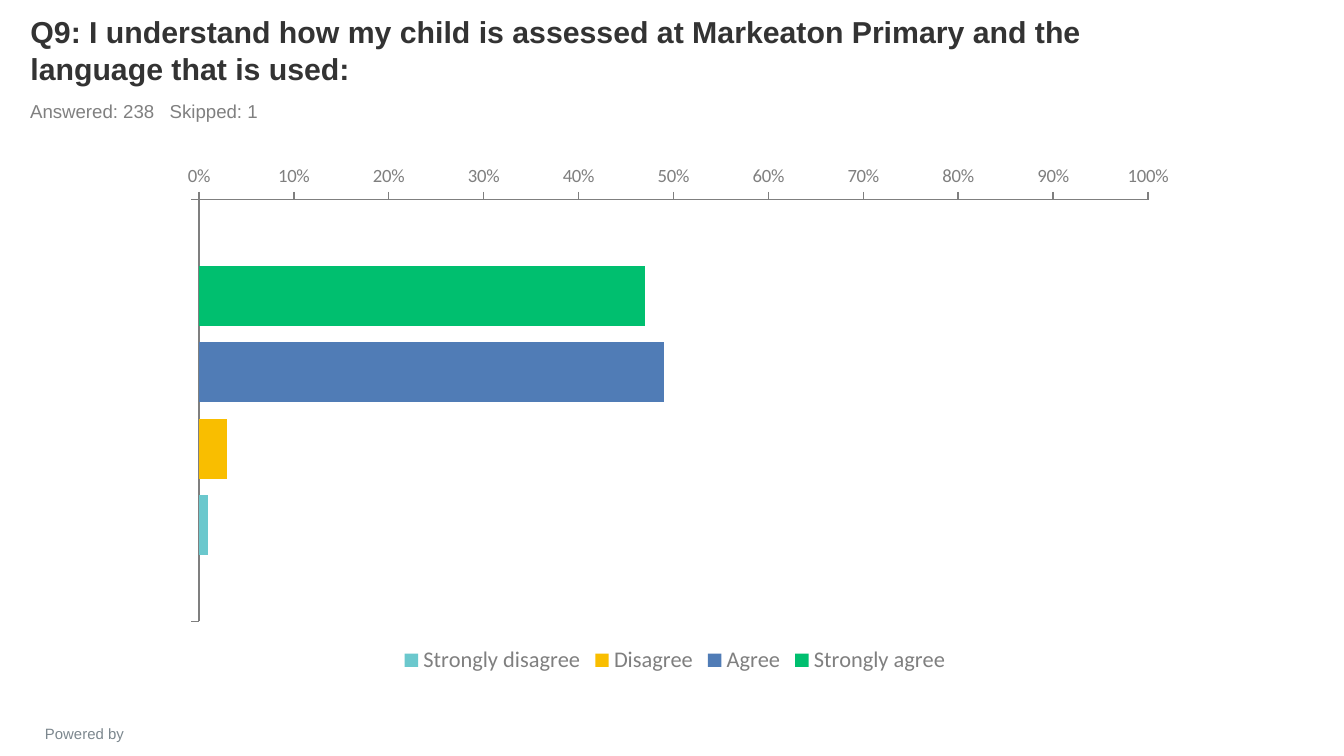
from pptx import Presentation
from pptx import util as u
from pptx.chart.data import CategoryChartData
from pptx.dml.color import RGBColor
from pptx.enum import chart as ch, text as t

SCALE = 914400 / 134.4
HUE = {"title": "333333", "sub": "808080", "foot": "7C878E", "axis": "7F7F7F"}
TITLE = "Q9: I understand how my child is assessed at Markeaton Primary and the language that is used:"
TITLE_BOX = (17, 12, 1210, 81)
LABELS = [
    ("Answered: 238   Skipped: 1", (17, 93, 1210, 35), 10, "sub", t.PP_ALIGN.LEFT),
    ("Powered by", (7, 718, 155, 24), 8, "foot", t.PP_ALIGN.CENTER),
]
CHART_BOX = (161, 155, 1028, 524)
BARS = [
    ("Strongly agree", 0.47, "00BF6F"),
    ("Agree", 0.49, "507CB6"),
    ("Disagree", 0.03, "F9BE00"),
    ("Strongly disagree", 0.01, "6BC8CD"),
]


def px(n):
    return u.Emu(round(n * SCALE))


def tint(hue):
    return RGBColor.from_string(hue)


def style(font, size, hue, name, bold=False):
    font.size, font.name, font.bold = u.Pt(size), name, bold
    font.color.rgb = tint(hue)


def write(shape, words, size, hue, align, anchor, bold=False):
    frame = shape.text_frame
    frame.word_wrap = True
    frame.auto_size = t.MSO_AUTO_SIZE.NONE
    frame.vertical_anchor = anchor
    para = frame.paragraphs[0]
    para.alignment = align
    run = para.add_run()
    run.text = words
    style(run.font, size, HUE[hue], "Arial", bold)


deck = Presentation()
deck.slide_width, deck.slide_height = px(1344), px(756)
slide = deck.slides.add_slide(deck.slide_layouts[5])

title = slide.shapes.title
title.left, title.top, title.width, title.height = map(px, TITLE_BOX)
write(title, TITLE, 16.2, "title", t.PP_ALIGN.LEFT, t.MSO_ANCHOR.BOTTOM, True)

for words, box, size, hue, align in LABELS:
    label = slide.shapes.add_textbox(*map(px, box))
    write(label, words, size, hue, align, t.MSO_ANCHOR.TOP)

data = CategoryChartData(number_format="0%")
data.categories = [" "]
for name, share, hue in BARS:
    data.add_series(name, [share])
chart = slide.shapes.add_chart(
    ch.XL_CHART_TYPE.BAR_CLUSTERED, *map(px, CHART_BOX), data).chart
chart.has_title = False
style(chart.font, 18, HUE["title"], "Calibri")

plot = chart.plots[0]
plot.gap_width, plot.overlap = 219, -27
plot.vary_by_categories = False
for bar, (name, share, hue) in zip(plot.series, BARS):
    bar.format.fill.solid()
    bar.format.fill.fore_color.rgb = tint(hue)

cat, val = chart.category_axis, chart.value_axis
for axis in (cat, val):
    axis.has_major_gridlines = False
    axis.major_tick_mark = ch.XL_TICK_MARK.OUTSIDE
    axis.minor_tick_mark = ch.XL_TICK_MARK.NONE
    axis.format.line.color.rgb = tint(HUE["axis"])
    axis.format.line.width = u.Pt(0.75)
    style(axis.tick_labels.font, 10, HUE["axis"], "Calibri")
cat.reverse_order = True
cat.crosses = ch.XL_AXIS_CROSSES.MAXIMUM
cat.tick_label_position = ch.XL_TICK_LABEL_POSITION.LOW
val.minimum_scale, val.maximum_scale, val.major_unit = 0, 1, 0.1
val.tick_labels.number_format = "0%"
val.tick_labels.number_format_is_linked = False

chart.has_legend = True
chart.legend.position = ch.XL_LEGEND_POSITION.BOTTOM
chart.legend.include_in_layout = False
style(chart.legend.font, 12, HUE["axis"], "Calibri")

deck.save("out.pptx")
